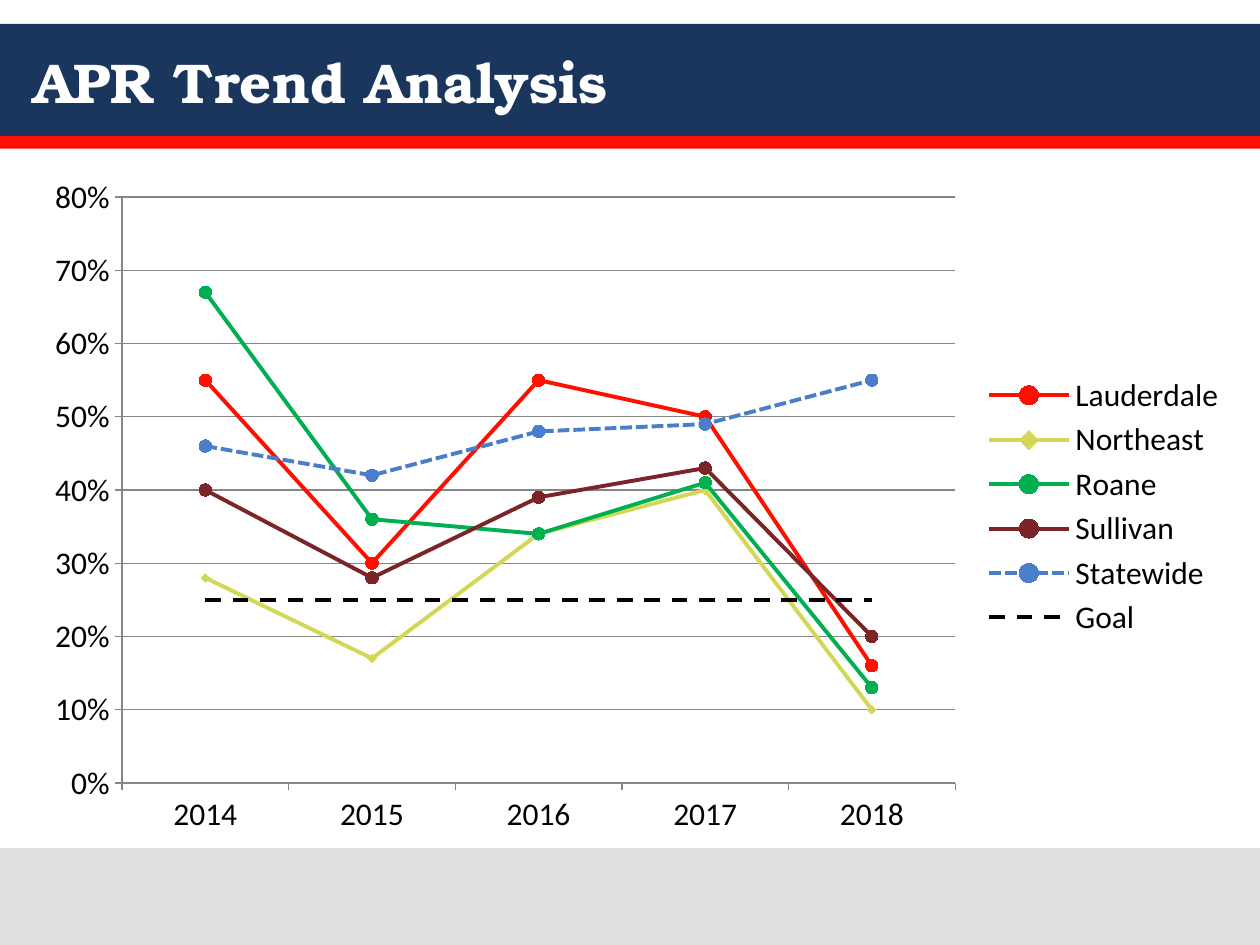
from lxml import etree
from pptx import Presentation
from pptx.chart.data import CategoryChartData
from pptx.dml.color import RGBColor
from pptx.enum.chart import XL_CHART_TYPE, XL_LEGEND_POSITION, XL_MARKER_STYLE, XL_TICK_MARK
from pptx.enum.dml import MSO_LINE
from pptx.enum.shapes import MSO_SHAPE
from pptx.enum.text import MSO_ANCHOR, PP_ALIGN
from pptx.oxml.ns import qn
from pptx.util import Pt

CIRCLE, DIAMOND, NO_MARKER = XL_MARKER_STYLE.CIRCLE, XL_MARKER_STYLE.DIAMOND, XL_MARKER_STYLE.NONE
SOLID, SHORT_DASH, DASH = MSO_LINE.SOLID, MSO_LINE.SQUARE_DOT, MSO_LINE.DASH
TITLE_ONLY = 5

THEME = {
    "navy": RGBColor.from_string("1B365D"),
    "red": RGBColor.from_string("FF0F00"),
    "footer": RGBColor.from_string("E0E0E0"),
    "white": RGBColor.from_string("FFFFFF"),
    "black": RGBColor.from_string("000000"),
    "grid": RGBColor.from_string("868686"),
    "lime": RGBColor.from_string("D2D755"),
    "green": RGBColor.from_string("00B050"),
    "maroon": RGBColor.from_string("7C2529"),
    "blue": RGBColor.from_string("4A7ECA"),
    "title_font": "TeX Gyre Bonum",
    "chart_font": "Calibri",
    "title_size": Pt(32),
    "chart_size": Pt(18),
}


def set_attributes(target, values):
    for name, value in values.items():
        setattr(target, name, value)


presentation = Presentation()
set_attributes(presentation, {"slide_width": Pt(720), "slide_height": Pt(540)})
slide = presentation.slides.add_slide(presentation.slide_layouts[TITLE_ONLY])

# Header, accent and footer bands
for top, height, color in [(13.7, 64.1, "navy"), (77.8, 7.2, "red"), (484.6, 55.4, "footer")]:
    band = slide.shapes.add_shape(MSO_SHAPE.RECTANGLE, 0, Pt(top), Pt(720), Pt(height))
    band.shadow.inherit = False
    band.fill.solid()
    band.fill.fore_color.rgb = THEME[color]
    band.line.fill.background()

# Title, brought in front of the bands
title = slide.shapes.title
set_attributes(title, {"left": Pt(12), "top": Pt(13.7), "width": Pt(696), "height": Pt(64.8)})
title.text_frame.text = "APR Trend Analysis"
title.text_frame.vertical_anchor = MSO_ANCHOR.MIDDLE
paragraph = title.text_frame.paragraphs[0]
paragraph.alignment = PP_ALIGN.LEFT
set_attributes(paragraph.font, {"name": THEME["title_font"], "size": THEME["title_size"], "bold": True})
paragraph.font.color.rgb = THEME["white"]
band.element.addnext(title.element)

# Trend data: name, values, color, marker, marker size, dash
trends = [
    ("Lauderdale", (0.55, 0.30, 0.55, 0.50, 0.16), "red", CIRCLE, 7, SOLID),
    ("Northeast", (0.28, 0.17, 0.34, 0.40, 0.10), "lime", DIAMOND, 5, SOLID),
    ("Roane", (0.67, 0.36, 0.34, 0.41, 0.13), "green", CIRCLE, 7, SOLID),
    ("Sullivan", (0.40, 0.28, 0.39, 0.43, 0.20), "maroon", CIRCLE, 7, SOLID),
    ("Statewide", (0.46, 0.42, 0.48, 0.49, 0.55), "blue", CIRCLE, 7, SHORT_DASH),
    ("Goal", (0.25,) * 5, "black", NO_MARKER, 5, DASH),
]
chart_data = CategoryChartData(number_format="0%")
chart_data.categories = [str(year) for year in range(2014, 2019)]
for name, values, *_ in trends:
    chart_data.add_series(name, values)

# Line chart
chart = slide.shapes.add_chart(
    XL_CHART_TYPE.LINE_MARKERS, Pt(18), Pt(94.3), Pt(690), Pt(390.2), chart_data
).chart
set_attributes(chart, {"has_title": False, "has_legend": True})
set_attributes(chart.legend, {"position": XL_LEGEND_POSITION.RIGHT, "include_in_layout": False})
set_attributes(chart.font, {"name": THEME["chart_font"], "size": THEME["chart_size"]})
chart.font.color.rgb = THEME["black"]

for series, (_, _, color, marker, marker_size, dash) in zip(chart.plots[0].series, trends):
    series.smooth = False
    set_attributes(series.format.line, {"width": Pt(2.25), "dash_style": dash})
    series.format.line.color.rgb = THEME[color]
    set_attributes(series.marker, {"style": marker, "size": marker_size})
    if marker != NO_MARKER:
        series.marker.format.fill.solid()
        series.marker.format.fill.fore_color.rgb = THEME[color]
        series.marker.format.line.color.rgb = THEME[color]

# Axes and gridlines
value_axis, category_axis = chart.value_axis, chart.category_axis
set_attributes(value_axis, {"minimum_scale": 0, "maximum_scale": 0.8, "major_unit": 0.1,
                            "has_major_gridlines": True})
set_attributes(value_axis.tick_labels, {"number_format": "0%", "number_format_is_linked": False})
for axis in (value_axis, category_axis):
    axis.major_tick_mark = XL_TICK_MARK.OUTSIDE
for lined in (value_axis, category_axis, value_axis.major_gridlines):
    lined.format.line.width = Pt(0.75)
    lined.format.line.color.rgb = THEME["grid"]

# Fixed inner plot area, as fractions of the chart
plot_area = chart.element.find(".//" + qn("c:plotArea"))
layout = plot_area.find(qn("c:layout"))
if layout is None:
    layout = etree.Element(qn("c:layout"))
    plot_area.insert(0, layout)
manual_layout = etree.SubElement(layout, qn("c:manualLayout"))
for tag, value in [("layoutTarget", "inner"), ("xMode", "edge"), ("yMode", "edge"),
                   ("x", "0.075"), ("y", "0.047"), ("w", "0.69"), ("h", "0.858")]:
    etree.SubElement(manual_layout, qn("c:" + tag)).set("val", value)

presentation.save("out.pptx")
